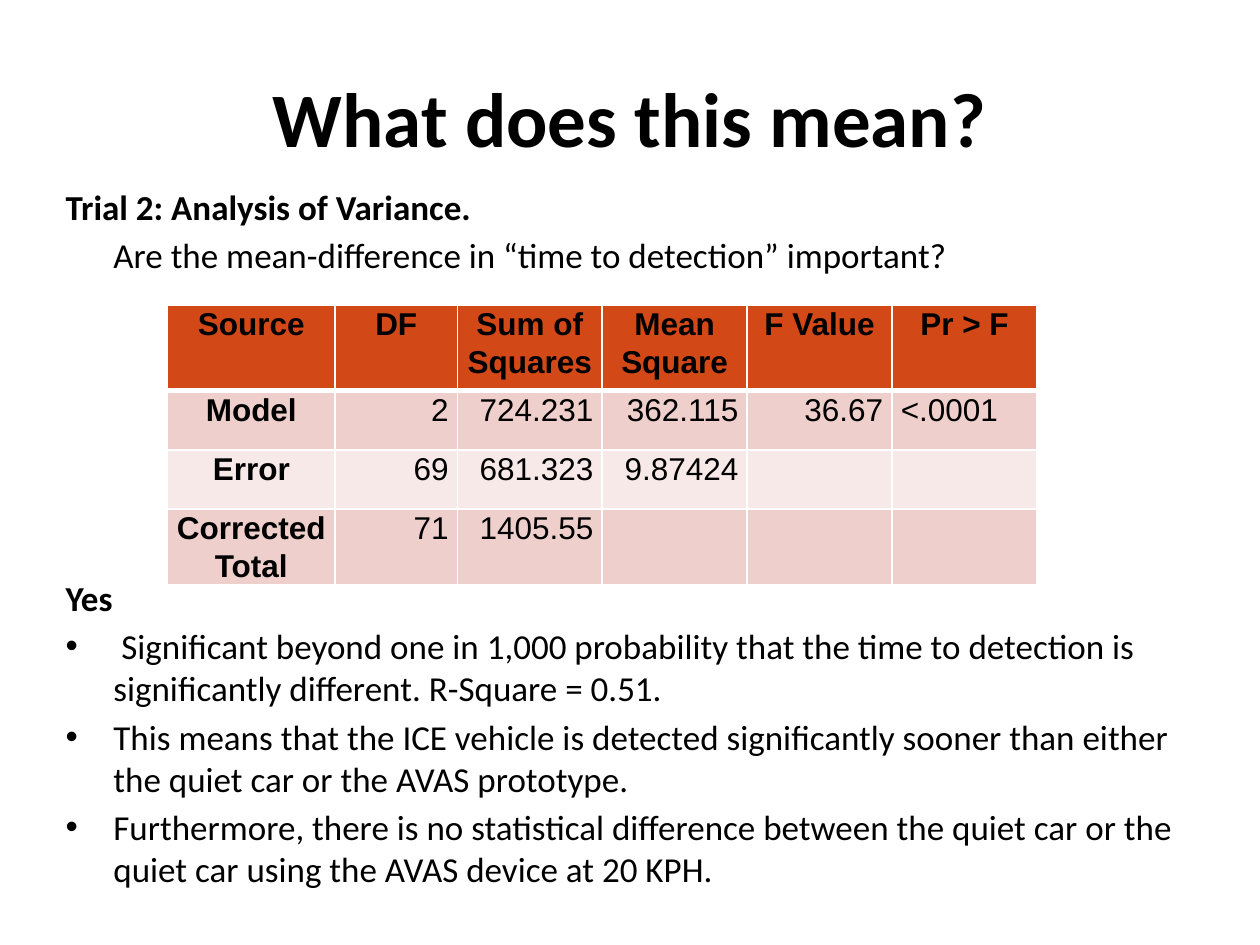
from lxml import etree
from pptx import Presentation
from pptx.dml.color import RGBColor
from pptx.enum import text
from pptx.oxml import ns
from pptx.util import Inches, Pt

COLORS = {"ink": "000000", "line": "FFFFFF", "header": "D34817",
          "odd": "EFCFCC", "even": "F7E9E8"}
ALIGN = text.PP_ALIGN


def add_run(p, words, size, font, bold):
    r = p.add_run()
    r.text = words
    r.font.size = Pt(size)
    r.font.name = font
    r.font.bold = bold
    r.font.color.rgb = RGBColor.from_string(COLORS["ink"])


def add_border(cell, side, width):
    """Draw one side of a cell; side is L, R, T or B."""
    ln = etree.SubElement(cell._tc.get_or_add_tcPr(), ns.qn(f"a:ln{side}"),
                          w=str(Pt(width)))
    fill = etree.SubElement(ln, ns.qn("a:solidFill"))
    etree.SubElement(fill, ns.qn("a:srgbClr"), val=COLORS["line"])


prs = Presentation()
prs.slide_width, prs.slide_height = Inches(10), Inches(7.5)
s = prs.slides.add_slide(prs.slide_layouts[1])

# Title
title = s.shapes.title
title.left, title.top = Inches(0.5), Inches(0.3)
title.width, title.height = Inches(9), Inches(1.25)
tf = title.text_frame
tf.vertical_anchor = text.MSO_ANCHOR.MIDDLE
p = tf.paragraphs[0]
p.alignment = ALIGN.CENTER
add_run(p, "What does this mean?", 44, "Calibri", True)

# Question above the table, answer below it
body = s.placeholders[1]
body.left, body.top = Inches(0.42), Inches(1.42)
body.width, body.height = Inches(9), Inches(1.17)
tf = body.text_frame
tf.word_wrap = True
tf.auto_size = text.MSO_AUTO_SIZE.NONE
GAP, TABLE_GAP = 3.6, 172
# wording, bold, bullet, left margin, first-line indent, space before
paragraphs = [
    ("Trial 2: Analysis of Variance.", True, False, 0.38, -0.38, 0),
    ("Are the mean-difference in “time to detection” important?",
     False, False, 0.38, 0, GAP),
    ("Yes", True, False, 0.38, -0.38, TABLE_GAP),
    (" Significant beyond one in 1,000 probability that the time to detection "
     "is significantly different. R-Square = 0.51.",
     False, True, 0.38, -0.38, GAP),
    ("This means that the ICE vehicle is detected significantly sooner than "
     "either the quiet car or the AVAS prototype.",
     False, True, 0.38, -0.38, GAP),
    ("Furthermore, there is no statistical difference between the quiet car "
     "or the quiet car using the AVAS device at 20 KPH.",
     False, True, 0.38, -0.38, GAP),
]
for i, (words, bold, bullet, margin, indent, before) in enumerate(paragraphs):
    p = tf.add_paragraph() if i else tf.paragraphs[0]
    p.space_before = Pt(before)
    pPr = p._p.get_or_add_pPr()
    pPr.set("marL", str(Inches(margin)))
    pPr.set("indent", str(Inches(indent)))
    if bullet:
        etree.SubElement(pPr, ns.qn("a:buFont"), typeface="Arial")
        etree.SubElement(pPr, ns.qn("a:buChar"), char="•")
    else:
        etree.SubElement(pPr, ns.qn("a:buNone"))
    add_run(p, words, 20, "Calibri", bold)

# Analysis of variance table
rows = [
    ["Source", "DF", "Sum of Squares", "Mean Square", "F Value", "Pr > F"],
    ["Model", "2", "724.231", "362.115", "36.67", "<.0001"],
    ["Error", "69", "681.323", "9.87424", "", ""],
    ["Corrected Total", "71", "1405.55", "", "", ""],
]
widths = [1.33, 0.97] + [1.15] * 4
heights = [0.68] + [0.47] * 3
table = s.shapes.add_table(len(rows), len(widths), Inches(1.33), Inches(2.42),
                           Inches(6.92), Inches(2.26)).table
for column, width in zip(table.columns, widths):
    column.width = Inches(width)
for row, height in zip(table.rows, heights):
    row.height = Inches(height)

for i, row in enumerate(rows):
    band = "header" if i == 0 else "odd" if i % 2 else "even"
    for j, words in enumerate(row):
        cell = table.cell(i, j)
        cell.margin_left = cell.margin_right = Inches(0.07)
        cell.margin_top = cell.margin_bottom = 0
        for side in "LRTB":
            thick = (i == 0 and side == "B") or (i == 1 and side == "T")
            add_border(cell, side, 3 if thick else 1)
        cell.fill.solid()
        cell.fill.fore_color.rgb = RGBColor.from_string(COLORS[band])
        if not words:
            continue
        heading = i == 0 or j == 0
        p = cell.text_frame.paragraphs[0]
        p.line_spacing = 1.07
        if heading:
            p.alignment = ALIGN.CENTER
        else:
            p.alignment = ALIGN.LEFT if j == 5 else ALIGN.RIGHT
        add_run(p, words, 18, "Arial", heading)

prs.save("out.pptx")
